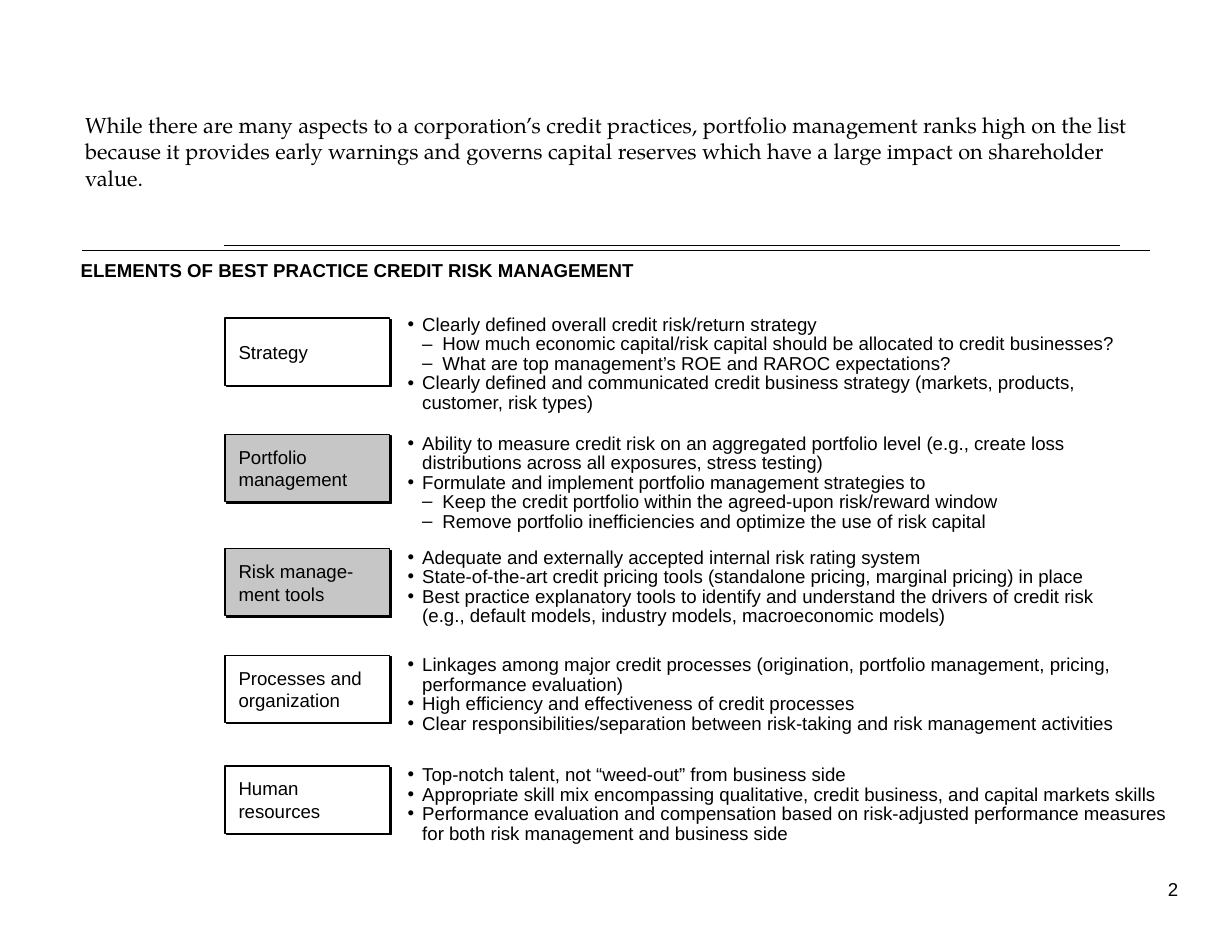
from copy import deepcopy
from lxml import etree
from pptx import Presentation
from pptx.dml.color import RGBColor
from pptx.enum.shapes import MSO_CONNECTOR as Connector, MSO_SHAPE as Shape
from pptx.enum.text import MSO_ANCHOR as Anchor, MSO_AUTO_SIZE as AutoSize, PP_ALIGN as Align
from pptx.oxml import parse_xml
from pptx.oxml.ns import nsdecls, qn
from pptx.util import Inches, Pt

COLORS = {"ink": "000000", "plain": "FFFFFF", "focus": "C6C6C6"}
BULLETS = [("•", 0.13, 0.13), ("–", 0.31, 0.18)]
BOX_LEFT, BOX_WIDTH, BOX_HEIGHT = 2.01, 1.47, 0.6
LIST_LEFT = 3.64

ELEMENTS = [
    ("Strategy", "plain", 2.84, 2.82, 6.38, [
        (0, "Clearly defined overall credit risk/return strategy"),
        (1, "How much economic capital/risk capital should be allocated to credit businesses?"),
        (1, "What are top management’s ROE and RAROC expectations?"),
        (0, "Clearly defined and communicated credit business strategy (markets, products, customer, risk types)"),
    ]),
    ("Portfolio\nmanagement", "focus", 3.88, 3.88, 6.22, [
        (0, "Ability to measure credit risk on an aggregated portfolio level (e.g., create loss distributions across all exposures, stress testing)"),
        (0, "Formulate and implement portfolio management strategies to"),
        (1, "Keep the credit portfolio within the agreed-upon risk/reward window"),
        (1, "Remove portfolio inefficiencies and optimize the use of risk capital"),
    ]),
    ("Risk manage-\nment tools", "focus", 4.9, 4.9, 6.29, [
        (0, "Adequate and externally accepted internal risk rating system"),
        (0, "State-of-the-art credit pricing tools (standalone pricing, marginal pricing) in place"),
        (0, "Best practice explanatory tools to identify and understand the drivers of credit risk (e.g., default models, industry models, macroeconomic models)"),
    ]),
    ("Processes and\norganization", "plain", 5.85, 5.86, 6.74, [
        (0, "Linkages among major credit processes (origination, portfolio management, pricing,\nperformance evaluation)"),
        (0, "High efficiency and effectiveness of credit processes"),
        (0, "Clear responsibilities/separation between risk-taking and risk management activities"),
    ]),
    ("Human\nresources", "plain", 6.84, 6.84, 6.82, [
        (0, "Top-notch talent, not “weed-out” from business side"),
        (0, "Appropriate skill mix encompassing qualitative, credit business, and capital markets skills"),
        (0, "Performance evaluation and compensation based on risk-adjusted performance measures for both risk management and business side"),
    ]),
]


def write(shape, items, size=12, font="Arial", bold=False, align=Align.LEFT,
          anchor=Anchor.TOP, insets=(0, 0, 0, 0), bulleted=False):
    frame = shape.text_frame
    frame.word_wrap = True
    frame.auto_size = AutoSize.NONE
    frame.vertical_anchor = anchor
    frame.margin_left, frame.margin_top, frame.margin_right, frame.margin_bottom = map(Inches, insets)
    for index, (level, text) in enumerate(items):
        paragraph = frame.add_paragraph() if index else frame.paragraphs[0]
        paragraph.text = text
        paragraph.alignment = align
        if bulleted:
            mark, margin, hanging = BULLETS[level]
            paragraph.level = level
            paragraph.line_spacing = 0.87
            properties = paragraph._p.get_or_add_pPr()
            properties.set("marL", str(Inches(margin)))
            properties.set("indent", str(-Inches(hanging)))
            etree.SubElement(properties, qn("a:buFont")).set("typeface", "Arial")
            etree.SubElement(properties, qn("a:buChar")).set("char", mark)
        for run in paragraph.runs:
            run.font.size = Pt(size)
            run.font.name = font
            run.font.bold = bold
            run.font.color.rgb = RGBColor.from_string(COLORS["ink"])
        for line_break in paragraph._p.findall(qn("a:br")):
            line_break.append(deepcopy(paragraph.runs[0]._r.rPr))


presentation = Presentation()
presentation.slide_width, presentation.slide_height = Inches(11), Inches(8.5)
slide = presentation.slides.add_slide(presentation.slide_layouts[5])
shapes = slide.shapes

title = shapes.title
title.left, title.top, title.width, title.height = map(Inches, (0.76, 1, 9.52, 0.75))
write(title, [(0, "While there are many aspects to a corporation’s credit practices, portfolio management ranks high on the list because it provides early warnings and governs capital reserves which have a large impact on shareholder value.")],
      size=14, font="TeX Gyre Pagella")

for start, end, height in [(2, 10, 2.19), (0.73, 10.27, 2.24)]:
    rule = shapes.add_connector(Connector.STRAIGHT, *map(Inches, (start, height, end, height)))
    rule.line.width = Pt(0.75)
    rule.line.color.rgb = RGBColor.from_string(COLORS["ink"])
    etree.SubElement(rule._element.spPr, qn("a:effectLst"))

heading = shapes.add_textbox(*map(Inches, (0.72, 2.31, 8, 0.2)))
write(heading, [(0, "ELEMENTS OF BEST PRACTICE CREDIT RISK MANAGEMENT")], bold=True)

for label, fill, box_top, list_top, list_width, points in ELEMENTS:
    box = shapes.add_shape(Shape.RECTANGLE, *map(Inches, (BOX_LEFT, box_top, BOX_WIDTH, BOX_HEIGHT)))
    box.fill.solid()
    box.fill.fore_color.rgb = RGBColor.from_string(COLORS[fill])
    box.line.width = Pt(0.75)
    box.line.color.rgb = RGBColor.from_string(COLORS["ink"])
    box._element.spPr.append(parse_xml(
        f'<a:effectLst {nsdecls("a")}><a:outerShdw dist="{Pt(1.4)}" dir="2700000" algn="ctr" rotWithShape="0">'
        f'<a:srgbClr val="{COLORS["ink"]}"/></a:outerShdw></a:effectLst>'))
    write(box, [(0, label)], anchor=Anchor.MIDDLE, insets=(0.12, 0.15, 0.1, 0.15))

    point_list = shapes.add_textbox(*map(Inches, (LIST_LEFT, list_top, list_width, 0.87)))
    write(point_list, points, bulleted=True)

page_number = shapes.add_textbox(*map(Inches, (8.23, 7.84, 2.29, 0.2)))
write(page_number, [(0, "2")], align=Align.RIGHT)

presentation.save("out.pptx")
